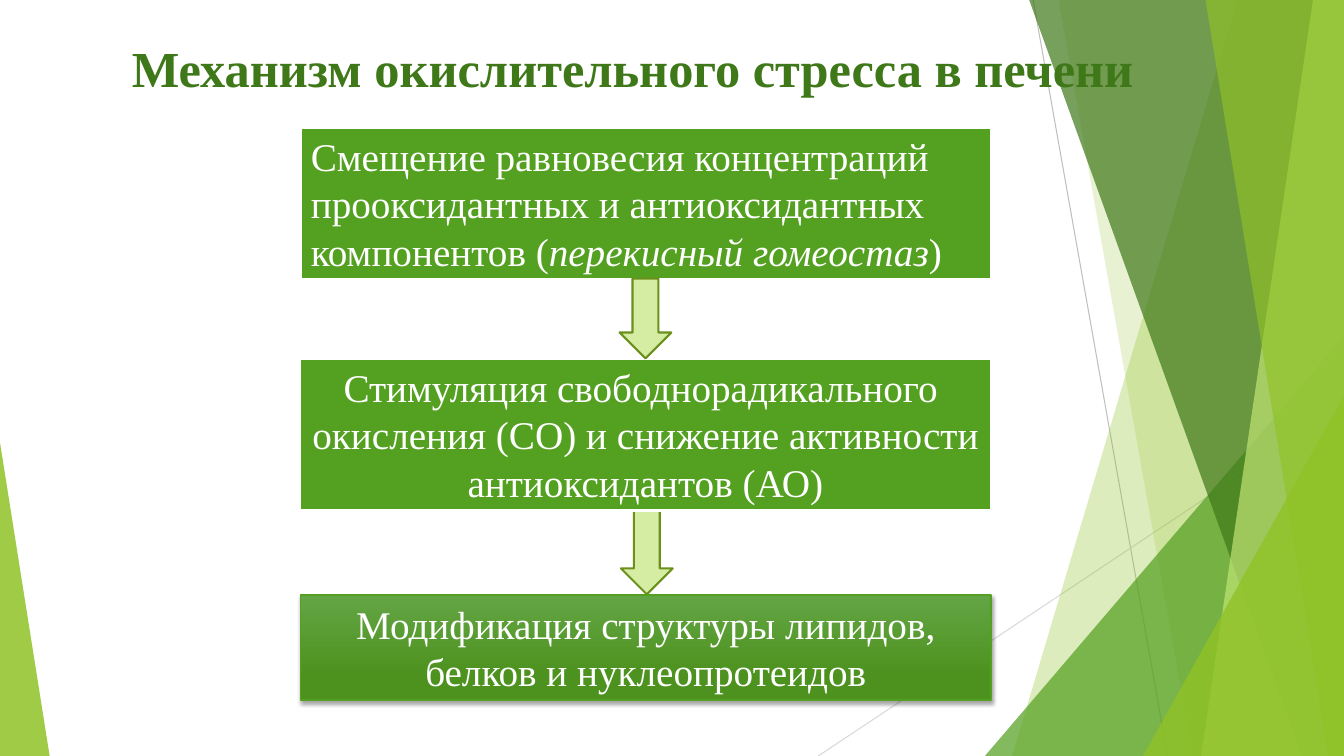
from lxml.etree import SubElement
from pptx import Presentation
from pptx.dml.color import RGBColor
from pptx.enum.shapes import MSO_CONNECTOR, MSO_SHAPE
from pptx.enum.text import MSO_ANCHOR, MSO_AUTO_SIZE, PP_ALIGN
from pptx.oxml.ns import qn
from pptx.util import Pt

WHITE = RGBColor(0xFF, 0xFF, 0xFF)
BLACK = RGBColor(0x00, 0x00, 0x00)
GREEN = RGBColor(0x54, 0xA0, 0x21)
DARK_GREEN = RGBColor(0x3F, 0x78, 0x19)
LIME = RGBColor(0x90, 0xC2, 0x26)
LIGHT_LIME = RGBColor(0xC0, 0xE4, 0x74)
ARROW_FILL = RGBColor(0xD5, 0xED, 0xA2)
ARROW_LINE = RGBColor(0x6B, 0x90, 0x1C)
GRADIENT_TOP = RGBColor(0x63, 0xA5, 0x45)
GRADIENT_BOTTOM = RGBColor(0x4D, 0x92, 0x1E)
GRAY = RGBColor(0xBF, 0xBF, 0xBF)
LIGHT_GRAY = RGBColor(0xD9, 0xD9, 0xD9)
WIDTH, HEIGHT = 960, 540


def add_text(paragraph, text, size=28, color=WHITE, bold=False, italic=False, align=PP_ALIGN.LEFT):
    paragraph.alignment = align
    run = paragraph.add_run()
    run.text = text
    run.font.name = "Times New Roman"
    run.font.size = Pt(size)
    run.font.color.rgb = color
    run.font.bold = bold
    run.font.italic = italic


def paint(shape, color, line_color=None, line_width=0, opacity=100):
    shape.shadow.inherit = False
    shape.fill.solid()
    shape.fill.fore_color.rgb = color
    if opacity < 100:
        color_element = shape.element.spPr.find(qn("a:solidFill")).find(qn("a:srgbClr"))
        SubElement(color_element, qn("a:alpha"), val=str(opacity * 1000))
    if line_color is None:
        shape.line.fill.background()
    else:
        shape.line.color.rgb = line_color
        shape.line.width = Pt(line_width)


presentation = Presentation()
presentation.slide_width = Pt(WIDTH)
presentation.slide_height = Pt(HEIGHT)
slide = presentation.slides.add_slide(presentation.slide_layouts[5])
shapes = slide.shapes

for start_x, start_y, end_x, end_y, color in [
    (738, 0, 834, HEIGHT, GRAY),
    (WIDTH, 290, 584.5, HEIGHT, LIGHT_GRAY),
]:
    line = shapes.add_connector(MSO_CONNECTOR.STRAIGHT, Pt(start_x), Pt(start_y), Pt(end_x), Pt(end_y))
    line.line.color.rgb = color
    line.line.width = Pt(0.75)
    SubElement(line.element.spPr, qn("a:effectLst"))

decorations = [
    ("facet", 884, 723, LIME, 30),
    ("facet", 756, 852, LIME, 20),
    ("triangle", (703.5, 240, 256.5, 1), None, GREEN, 72),
    ("facet", 735, 930, DARK_GREEN, 70),
    ("facet", 938, 858, LIGHT_LIME, 70),
    ("facet", 861, 949, LIME, 65),
    ("triangle", (816.5, 283, 143.5, 1), None, LIME, 80),
    ("triangle", (0, 316, 35.5, 0), None, LIME, 85),
]
for kind, first, bottom_x, color, opacity in decorations:
    if kind == "facet":
        builder = shapes.build_freeform(Pt(first), Pt(-0.5))
        corners = [(WIDTH, -0.5), (WIDTH, HEIGHT), (bottom_x, HEIGHT)]
        builder.add_line_segments([(Pt(x), Pt(y)) for x, y in corners], close=True)
        decoration = builder.convert_to_shape()
    else:
        left, top, width, apex = first
        decoration = shapes.add_shape(
            MSO_SHAPE.ISOSCELES_TRIANGLE, Pt(left), Pt(top), Pt(width), Pt(HEIGHT - top))
        decoration.adjustments[0] = apex
    paint(decoration, color, opacity=opacity)

title = shapes.title
title.left, title.top, title.width, title.height = Pt(87), Pt(23), Pt(746), Pt(116.5)
title.element.getparent().append(title.element)
title.text_frame.vertical_anchor = MSO_ANCHOR.TOP
title.text_frame.auto_size = MSO_AUTO_SIZE.NONE
title.text_frame.word_wrap = True
add_text(title.text_frame.paragraphs[0], "Механизм окислительного стресса в печени",
         size=36, color=DARK_GREEN, bold=True)

arrows = [(432, 376, 60), (432.5, 209, 57)]
steps = [
    (215, 91, 493, 108.5, PP_ALIGN.LEFT, [[
        ("Смещение равновесия концентраций прооксидантных и антиоксидантных компонентов (", False),
        ("перекисный гомеостаз", True),
        (")", False),
    ]]),
    (214, 256, 494, 108.5, PP_ALIGN.CENTER, [
        [("Стимуляция свободнорадикального ", False)],
        [("окисления (СО) и снижение активности антиоксидантов (АО)", False)],
    ]),
    (214.5, 425, 493.5, 75, PP_ALIGN.CENTER, [
        [("Модификация структуры липидов, белков и нуклеопротеидов", False)],
    ]),
]

for left, top, length in arrows:
    arrow = shapes.add_shape(MSO_SHAPE.RIGHT_ARROW, Pt(left), Pt(top), Pt(length), Pt(37))
    arrow.rotation = 90
    paint(arrow, ARROW_FILL, ARROW_LINE, 1.5)

for left, top, width, height, align, lines in steps:
    box = shapes.add_shape(MSO_SHAPE.RECTANGLE, Pt(left), Pt(top), Pt(width), Pt(height))
    paint(box, GREEN, WHITE, 2)
    frame = box.text_frame
    frame.word_wrap = True
    frame.auto_size = MSO_AUTO_SIZE.SHAPE_TO_FIT_TEXT
    frame.vertical_anchor = MSO_ANCHOR.MIDDLE
    for index, runs in enumerate(lines):
        paragraph = frame.add_paragraph() if index else frame.paragraphs[0]
        for text, italic in runs:
            add_text(paragraph, text, italic=italic, align=align)

shapes.element.append(arrow.element)

box.line.color.rgb = GREEN
box.line.width = Pt(1)
box.fill.gradient()
box.fill.gradient_angle = 270
for stop, color, position in zip(box.fill.gradient_stops, (GRADIENT_TOP, GRADIENT_BOTTOM), (0, 0.78)):
    stop.color.rgb = color
    stop.position = position
effects = box.element.spPr.find(qn("a:effectLst"))
shadow = SubElement(effects, qn("a:outerShdw"), blurRad=str(Pt(3)), dist=str(Pt(2)),
                    dir="5400000", rotWithShape="0")
shadow_color = SubElement(shadow, qn("a:srgbClr"), val=str(BLACK))
SubElement(shadow_color, qn("a:alpha"), val="35000")

presentation.save("out.pptx")
